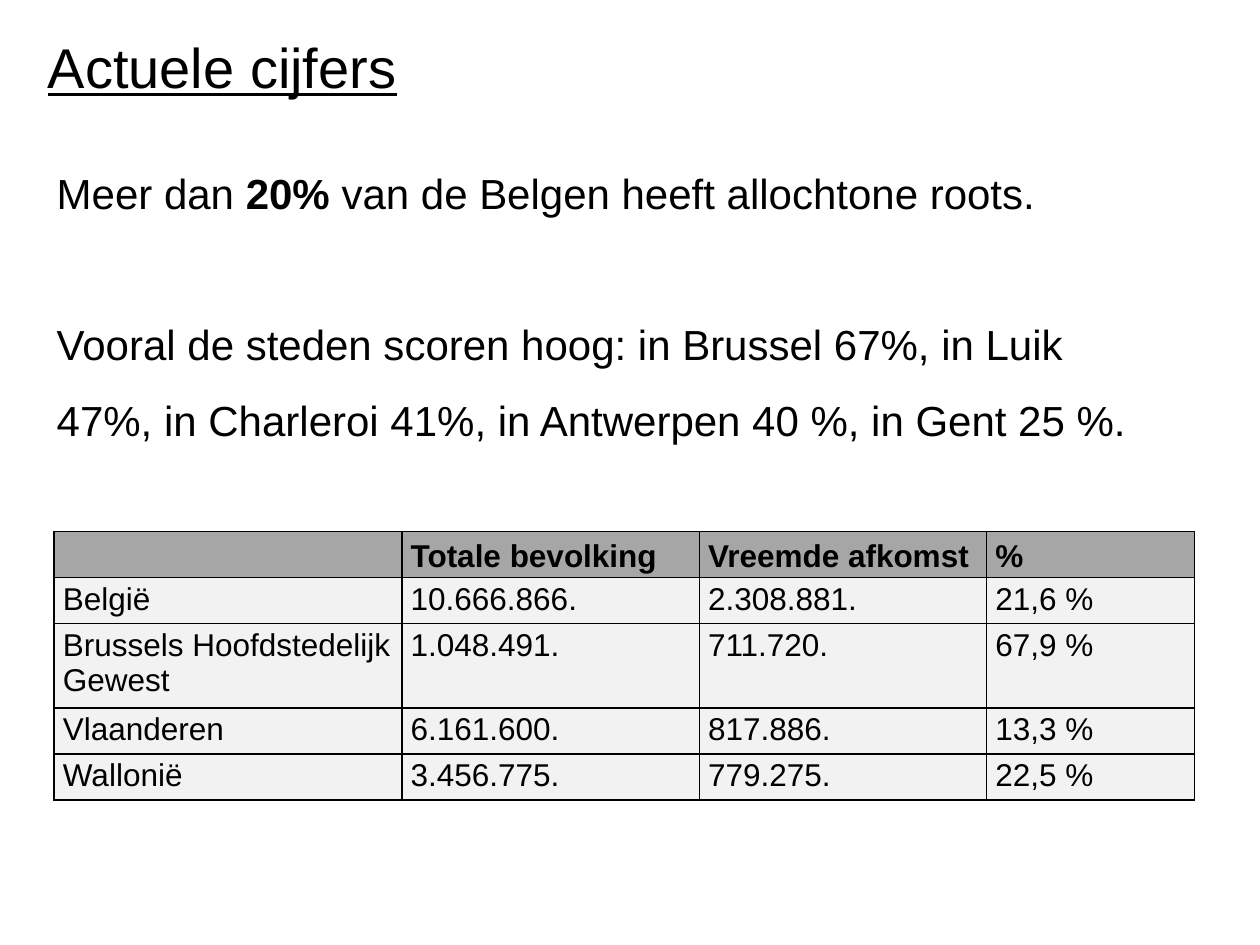
from typing import NamedTuple

from lxml import etree
from pptx import Presentation
from pptx import util as u
from pptx.dml.color import RGBColor
from pptx.enum import text
from pptx.oxml import ns

BLACK = RGBColor(0x00, 0x00, 0x00)
HEADER_GREY = RGBColor(0xA6, 0xA6, 0xA6)
ROW_GREY = RGBColor(0xF2, 0xF2, 0xF2)
FONT = "Arial"
SLIDE_WIDTH = u.Inches(10)
SLIDE_HEIGHT = u.Inches(7.5)


class Area(NamedTuple):
    left: float
    top: float
    width: float
    height: float


class Region(NamedTuple):
    name: str
    population: str
    foreign_origin: str
    percentage: str


TITLE_AREA = Area(2.8, 2.8, 29.9, 8.53)
BODY_AREA = Area(3.5, 14.27, 88.2, 33.6)
TABLE_AREA = Area(4.3, 56.27, 90.5, 28.4)
COLUMN_WIDTHS = (27.6, 23.6, 22.8, 16.5)
ROW_HEIGHT = 4.87
TALL_ROW_HEIGHT = 8.93

HEADINGS = Region("", "Totale bevolking", "Vreemde afkomst", "%")
REGIONS = (
    Region("België", "10.666.866.", "2.308.881.", "21,6 %"),
    Region("Brussels Hoofdstedelijk Gewest", "1.048.491.", "711.720.", "67,9 %"),
    Region("Vlaanderen", "6.161.600.", "817.886.", "13,3 %"),
    Region("Wallonië", "3.456.775.", "779.275.", "22,5 %"),
)
CITIES = (
    "Vooral de steden scoren hoog: in Brussel 67%, in Luik 47%, "
    "in Charleroi 41%, in Antwerpen 40 %, in Gent 25 %."
)


def across(percent: float) -> int:
    return round(SLIDE_WIDTH * percent / 100)


def down(percent: float) -> int:
    return round(SLIDE_HEIGHT * percent / 100)


def frame(area: Area) -> tuple[int, int, int, int]:
    return across(area.left), down(area.top), across(area.width), down(area.height)


def place(placeholder, area: Area) -> None:
    placeholder.left, placeholder.top, placeholder.width, placeholder.height = frame(area)


def write(paragraph, words: str, *, size: float, bold: bool = False, underline: bool = False) -> None:
    run = paragraph.add_run()
    run.text = words
    run.font.name = FONT
    run.font.size = u.Pt(size)
    run.font.bold = bold
    run.font.underline = underline
    run.font.color.rgb = BLACK


def plain_paragraph(paragraph, gap_after: float = 0) -> None:
    paragraph.alignment = text.PP_ALIGN.LEFT
    paragraph.line_spacing = 1.5
    paragraph.space_before = u.Pt(0)
    paragraph.space_after = u.Pt(gap_after)
    properties = paragraph._p.get_or_add_pPr()
    properties.set("marL", "0")
    properties.set("indent", "0")
    etree.SubElement(properties, ns.qn("a:buNone"))


def add_borders(cell) -> None:
    properties = cell._tc.get_or_add_tcPr()
    for side in ("lnL", "lnR", "lnT", "lnB"):
        line = etree.SubElement(properties, ns.qn(f"a:{side}"), w=str(u.Pt(1)))
        fill = etree.SubElement(line, ns.qn("a:solidFill"))
        etree.SubElement(fill, ns.qn("a:srgbClr"), val=str(BLACK))


def fill_row(cells, region: Region, *, header: bool) -> None:
    for cell, words in zip(cells, region):
        add_borders(cell)
        cell.fill.solid()
        cell.fill.fore_color.rgb = HEADER_GREY if header else ROW_GREY
        cell.margin_left = cell.margin_right = u.Inches(0.07)
        cell.margin_top = cell.margin_bottom = u.Inches(0.03)
        cell.vertical_anchor = text.MSO_ANCHOR.BOTTOM if header else text.MSO_ANCHOR.TOP
        if words:
            write(cell.text_frame.paragraphs[0], words, size=18, bold=header)


def add_title(slide) -> None:
    title = slide.shapes.title
    place(title, TITLE_AREA)
    title.text_frame.word_wrap = False
    title.text_frame.auto_size = text.MSO_AUTO_SIZE.SHAPE_TO_FIT_TEXT
    title.text_frame.vertical_anchor = text.MSO_ANCHOR.TOP
    heading = title.text_frame.paragraphs[0]
    heading.alignment = text.PP_ALIGN.LEFT
    write(heading, "Actuele cijfers", size=32, underline=True)


def add_body(slide) -> None:
    body = slide.placeholders[1]
    place(body, BODY_AREA)
    body.text_frame.word_wrap = True
    body.text_frame.auto_size = text.MSO_AUTO_SIZE.SHAPE_TO_FIT_TEXT
    body.text_frame.vertical_anchor = text.MSO_ANCHOR.MIDDLE
    share = body.text_frame.paragraphs[0]
    plain_paragraph(share, gap_after=43)
    write(share, "Meer dan ", size=24)
    write(share, "20% ", size=24, bold=True)
    write(share, "van de Belgen heeft allochtone roots.", size=24)
    cities = body.text_frame.add_paragraph()
    plain_paragraph(cities)
    write(cities, CITIES, size=24)


def add_population_table(slide) -> None:
    rows = (HEADINGS, *REGIONS)
    table = slide.shapes.add_table(len(rows), len(COLUMN_WIDTHS), *frame(TABLE_AREA)).table
    for column, width in zip(table.columns, COLUMN_WIDTHS):
        column.width = across(width)
    for row, region in zip(table.rows, rows):
        wraps = len(region.name) > 24
        row.height = down(TALL_ROW_HEIGHT if wraps else ROW_HEIGHT)
        fill_row(row.cells, region, header=region is HEADINGS)


def main() -> None:
    deck = Presentation()
    deck.slide_width, deck.slide_height = SLIDE_WIDTH, SLIDE_HEIGHT
    slide = deck.slides.add_slide(deck.slide_layouts[1])
    add_title(slide)
    add_body(slide)
    add_population_table(slide)
    deck.save("out.pptx")


if __name__ == "__main__":
    main()
